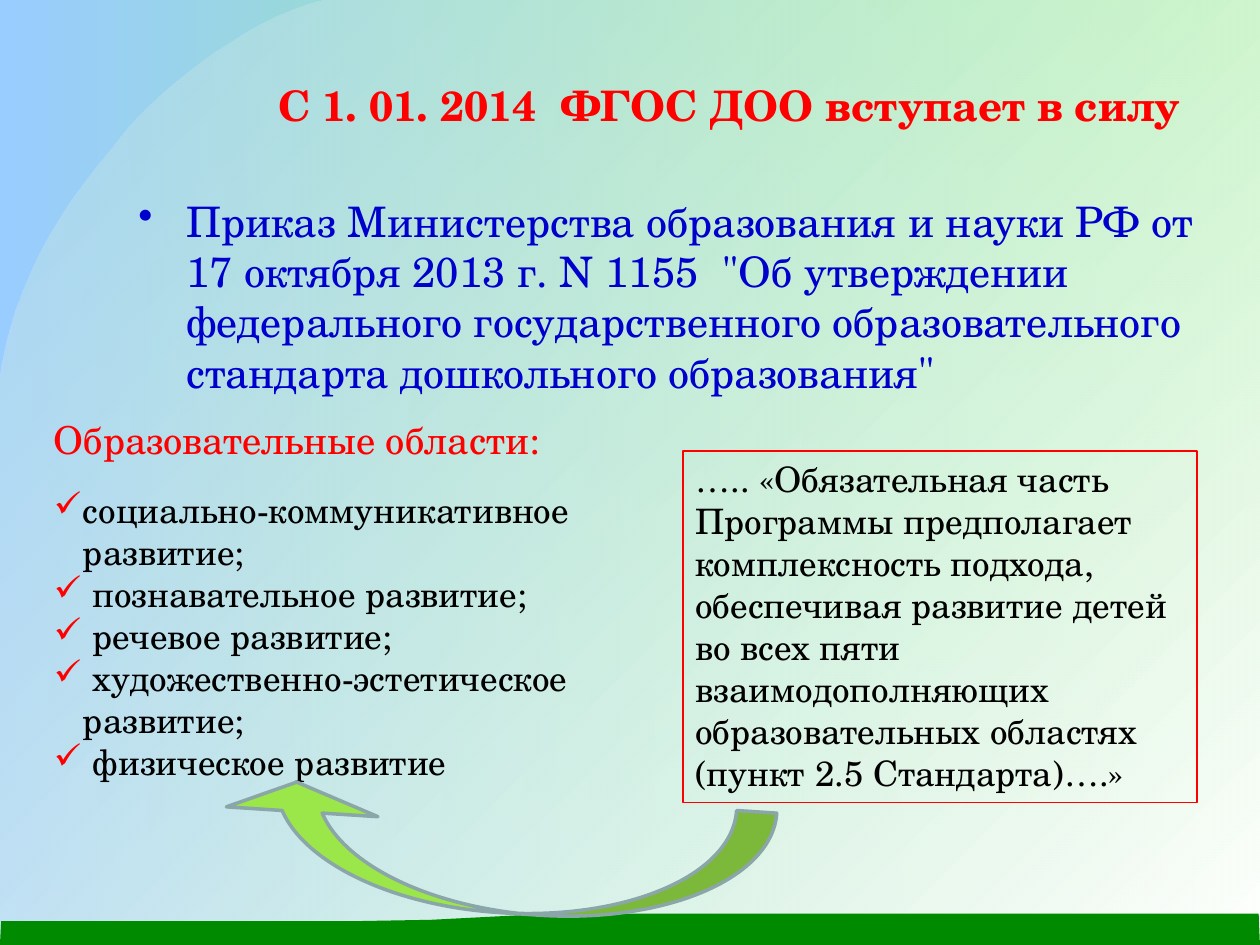
"""Build the slide on the preschool education standard coming into force."""
from dataclasses import dataclass
from typing import List, Optional, Tuple

from lxml.etree import SubElement
from pptx import Presentation
from pptx.dml.color import RGBColor
from pptx.enum.shapes import MSO_SHAPE
from pptx.enum.text import MSO_ANCHOR, PP_ALIGN
from pptx.oxml.ns import qn
from pptx.util import Inches, Pt

FONT = "TeX Gyre Schola"
COLORS = {
    "sky": "99CCFF", "meadow": "99FF66", "mist": "BBE0E3", "white": "FFFFFF",
    "ground": "008A00", "red": "FF0000", "blue": "0000CC", "black": "000000",
    "arrow": "9BE648", "arrow_edge": "8AA6A8",
}
Point = Tuple[float, float]


@dataclass
class TextBlock:
    box: Tuple[float, float, float, float]
    lines: List[str]
    size: int
    color: str
    bold: bool = False
    align: PP_ALIGN = PP_ALIGN.LEFT
    anchor: MSO_ANCHOR = MSO_ANCHOR.TOP
    bullet: str = ""
    bullet_color: str = ""
    hanging: float = 0
    border: Optional[str] = None


BLOCKS = [
    TextBlock((2, 0.33, 7.58, 1), ["С 1. 01. 2014  ФГОС ДОО вступает в силу"], 24, "red",
              bold=True, align=PP_ALIGN.CENTER, anchor=MSO_ANCHOR.MIDDLE),
    TextBlock((1, 1.5, 9, 1.33),
              ["Приказ Министерства образования и науки РФ от 17 октября 2013 г. N 1155  "
               "\"Об утверждении федерального государственного образовательного "
               "стандарта дошкольного образования\""],
              24, "blue", bullet="•", bullet_color="blue", hanging=0.38),
    TextBlock((0.33, 3.83, 4.92, 2.76),
              ["социально-коммуникативное развитие;", " познавательное развитие;",
               " речевое развитие;", " художественно-эстетическое развитие;",
               " физическое развитие"],
              20, "black", bullet="✓", bullet_color="red", hanging=0.23),
    TextBlock((0.33, 3.25, 5.5, 0.47), ["Образовательные области:"], 22, "red"),
    TextBlock((5.42, 3.58, 4.08, 2.79),
              ["….. «Обязательная часть Программы предполагает комплексность подхода, "
               "обеспечивая развитие детей во всех пяти взаимодополняющих "
               "образовательных областях (пункт 2.5 Стандарта)….»"],
              20, "black", border="red"),
]


def rgb(name: str) -> RGBColor:
    return RGBColor.from_string(COLORS[name])


def curve(start: Point, first: Point, second: Point, end: Point, steps: int = 16) -> List[Point]:
    points = []
    for step in range(1, steps + 1):
        t = step / steps
        weights = ((1 - t) ** 3, 3 * t * (1 - t) ** 2, 3 * t * t * (1 - t), t ** 3)
        corners = (start, first, second, end)
        points.append((sum(w * c[0] for w, c in zip(weights, corners)),
                       sum(w * c[1] for w, c in zip(weights, corners))))
    return points


def set_gradient(fill, start: str, end: str, angle: float) -> None:
    fill.gradient()
    fill.gradient_angle = angle
    for stop, color in zip(fill.gradient_stops, (start, end)):
        stop.color.rgb = rgb(color)


def add_outline(slide, points: List[Point]):
    corners = [(Inches(x), Inches(y)) for x, y in points]
    builder = slide.shapes.build_freeform(*corners[0])
    builder.add_line_segments(corners[1:], close=True)
    shape = builder.convert_to_shape()
    shape.shadow.inherit = False
    shape.line.fill.background()
    return shape


def add_backdrop(slide) -> None:
    set_gradient(slide.background.fill, "sky", "meadow", 0)
    hill_points = [(2.58, 0)]
    for bend in (((1.9, 0.16), (1.16, 0.83), (0.98, 1.07)),
                 ((0.8, 1.32), (0.16, 1.94), (0, 3.01))):
        hill_points += curve(hill_points[-1], *bend)
    hill = add_outline(slide, hill_points + [(0, 7.5), (10, 7.5), (10, 0)])
    set_gradient(hill.fill, "mist", "white", 315)
    first_color = next(hill._element.spPr.iter(qn("a:srgbClr")))
    SubElement(first_color, qn("a:alpha"), val="39000")
    ground = add_outline(slide, [(9.99, 7.25), (4.73, 7.25), (4.2, 7.26), (3.42, 7.3),
                                 (2.86, 7.31), (0.01, 7.31), (0, 7.5), (10, 7.5)])
    ground.fill.solid()
    ground.fill.fore_color.rgb = rgb("ground")


def add_bullet(paragraph, block: TextBlock) -> None:
    properties = paragraph._p.get_or_add_pPr()
    properties.set("marL", str(Inches(block.hanging)))
    properties.set("indent", str(-Inches(block.hanging)))
    color = SubElement(properties, qn("a:buClr"))
    SubElement(color, qn("a:srgbClr"), val=COLORS[block.bullet_color])
    SubElement(properties, qn("a:buChar"), char=block.bullet)


def add_text(slide, block: TextBlock) -> None:
    box = [Inches(value) for value in block.box]
    if block.border:
        shape = slide.shapes.add_shape(MSO_SHAPE.RECTANGLE, *box)
        shape.shadow.inherit = False
        shape.fill.background()
        shape.line.color.rgb = rgb(block.border)
        shape.line.width = Pt(0.75)
    else:
        shape = slide.shapes.add_textbox(*box)
    frame = shape.text_frame
    frame.word_wrap = True
    frame.vertical_anchor = block.anchor
    for index, line in enumerate(block.lines):
        paragraph = frame.add_paragraph() if index else frame.paragraphs[0]
        paragraph.alignment = block.align
        if block.bullet:
            add_bullet(paragraph, block)
        run = paragraph.add_run()
        run.text = line
        run.font.name = FONT
        run.font.size = Pt(block.size)
        run.font.bold = block.bold
        run.font.color.rgb = rgb(block.color)


def add_return_arrow(slide) -> None:
    arrow = slide.shapes.add_shape(MSO_SHAPE.CURVED_UP_ARROW, Inches(1.72), Inches(6.31),
                                   Inches(4.42), Inches(0.93))
    arrow.shadow.inherit = False
    for index, value in enumerate((0.343, 1.296, 0.25)):
        arrow.adjustments[index] = value
    arrow.rotation = 3.7
    arrow._element.spPr.find(qn("a:xfrm")).set("flipH", "1")
    arrow.fill.solid()
    arrow.fill.fore_color.rgb = rgb("arrow")
    arrow.line.color.rgb = rgb("arrow_edge")
    arrow.line.width = Pt(2)


def main() -> None:
    presentation = Presentation()
    presentation.slide_width = Inches(10)
    presentation.slide_height = Inches(7.5)
    slide = presentation.slides.add_slide(presentation.slide_layouts[6])
    add_backdrop(slide)
    for block in BLOCKS:
        add_text(slide, block)
    add_return_arrow(slide)
    presentation.save("out.pptx")


if __name__ == "__main__":
    main()
